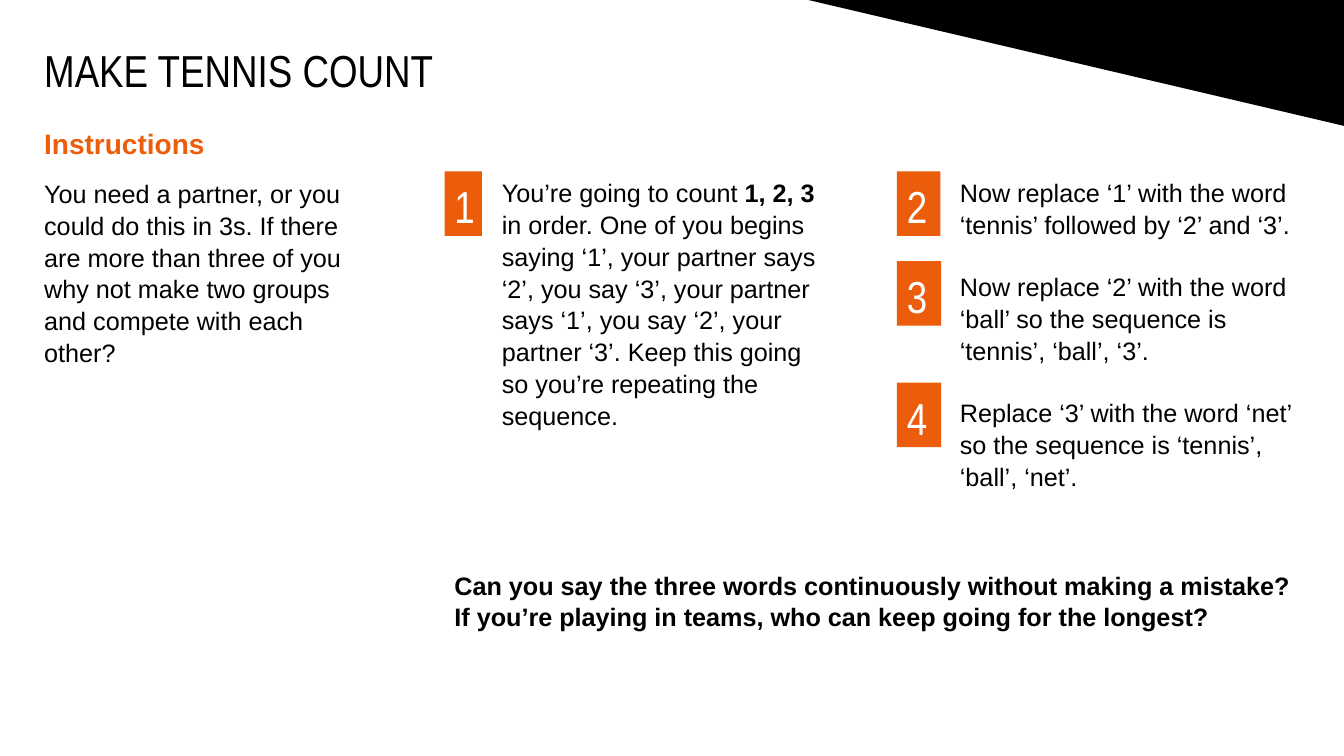
from pptx import Presentation
from pptx.dml.color import RGBColor
from pptx.enum import shapes, text
from pptx.util import Pt

COLORS = {"orange": "EB5D0B", "black": "000000", "white": "FFFFFF"}
BODY_FONT = "Arial"
DISPLAY_FONT = "Arial Narrow"
BODY_SIZE = 18
DISPLAY_SIZE = 32
LINE_SPACING = 1.05
STEP_GAP = 21.7

TITLE = "MAKE TENNIS COUNT"
HEADING = "Instructions"
INTRO = (
    "You need a partner, or you could do this in 3s. If there are more than "
    "three of you why not make two groups and compete with each other?"
)
COUNTING_STEP = [
    ("You’re going to count ", False),
    ("1, 2, 3 ", True),
    None,
    ("in order. One of you begins saying ‘1’, your partner says ‘2’, you say ‘3’, "
     "your partner says ‘1’, you say ‘2’, your partner ‘3’. Keep this going ", False),
    None,
    ("so you’re repeating the sequence.", False),
]
WORD_STEPS = [
    "Now replace ‘1’ with the word ‘tennis’ followed by ‘2’ and ‘3’.",
    "Now replace ‘2’ with the word ‘ball’ so the sequence is ‘tennis’, ‘ball’, ‘3’.",
    "Replace ‘3’ with the word ‘net’ so the sequence is ‘tennis’, ‘ball’, ‘net’.",
]
CHALLENGE = (
    "Can you say the three words continuously without making a mistake? "
    "If you’re playing in teams, who can keep going for the longest?"
)

STEPS_TOP = 122.4
STEPS_HEIGHT = 216
COLUMN_LEFT = 351.4
COLUMN_WIDTH = 256.7
COLUMN_PITCH = 327.2
BADGE_HEIGHT = 46.1
BADGES = [
    (317.5, STEPS_TOP, 26.8),
    (640.7, STEPS_TOP, 31),
    (640.7, 186.5, 31.7),
    (640.7, 273.4, 31.7),
]


def rgb(name):
    return RGBColor.from_string(COLORS[name])


def style(paragraph, color="black", size=BODY_SIZE, font=BODY_FONT, bold=None):
    paragraph.line_spacing = LINE_SPACING
    paragraph.alignment = text.PP_ALIGN.LEFT
    paragraph.font.name = font
    paragraph.font.size = Pt(size)
    paragraph.font.color.rgb = rgb(color)
    if bold is not None:
        paragraph.font.bold = bold


def add_text_box(slide, left, top, width, height, lines):
    box = slide.shapes.add_textbox(Pt(left), Pt(top), Pt(width), Pt(height))
    frame = box.text_frame
    frame.word_wrap = True
    for index, line in enumerate(lines):
        paragraph = frame.paragraphs[0] if index == 0 else frame.add_paragraph()
        paragraph.text = line
        style(paragraph)
    return frame


def add_filled_shape(slide, kind, left, top, width, height, color):
    shape = slide.shapes.add_shape(kind, Pt(left), Pt(top), Pt(width), Pt(height))
    shape.shadow.inherit = False
    shape.fill.solid()
    shape.fill.fore_color.rgb = rgb(color)
    shape.line.fill.background()
    return shape


def main():
    presentation = Presentation()
    presentation.slide_width, presentation.slide_height = Pt(960), Pt(540)
    slide = presentation.slides.add_slide(presentation.slide_layouts[6])

    intro = add_text_box(slide, 24.5, 85.7, 244.8, 174.2, [HEADING, INTRO])
    heading = intro.paragraphs[0]
    style(heading, "orange", 20, bold=True)
    heading.space_after = Pt(12)

    corner = add_filled_shape(
        slide, shapes.MSO_SHAPE.RIGHT_TRIANGLE, 577.4, 0, 383, 90, "black")
    corner.rotation = 180

    counting = add_text_box(
        slide, COLUMN_LEFT, STEPS_TOP, COLUMN_WIDTH, STEPS_HEIGHT, [""])
    paragraph = counting.paragraphs[0]
    for part in COUNTING_STEP:
        if part is None:
            paragraph.add_line_break()
        else:
            run = paragraph.add_run()
            run.text, run.font.bold = part

    words = add_text_box(
        slide, COLUMN_LEFT + COLUMN_PITCH, STEPS_TOP, COLUMN_WIDTH, STEPS_HEIGHT,
        WORD_STEPS)
    for paragraph in words.paragraphs[1:]:
        paragraph.space_before = Pt(STEP_GAP)

    title = add_text_box(slide, 24.5, 23, 1000.8, 51.8, [TITLE])
    title.vertical_anchor = text.MSO_ANCHOR.MIDDLE
    style(title.paragraphs[0], size=DISPLAY_SIZE, font=DISPLAY_FONT)

    challenge = add_text_box(slide, 317.5, 402.5, 625.7, 51.1, [CHALLENGE])
    style(challenge.paragraphs[0], bold=True)

    for number, (left, top, width) in enumerate(BADGES, 1):
        badge = add_filled_shape(
            slide, shapes.MSO_SHAPE.RECTANGLE, left, top, width, BADGE_HEIGHT, "orange")
        frame = badge.text_frame
        frame.word_wrap = False
        frame.vertical_anchor = text.MSO_ANCHOR.TOP
        frame.text = str(number)
        style(frame.paragraphs[0], "white", DISPLAY_SIZE, DISPLAY_FONT)

    presentation.save("out.pptx")


if __name__ == "__main__":
    main()
